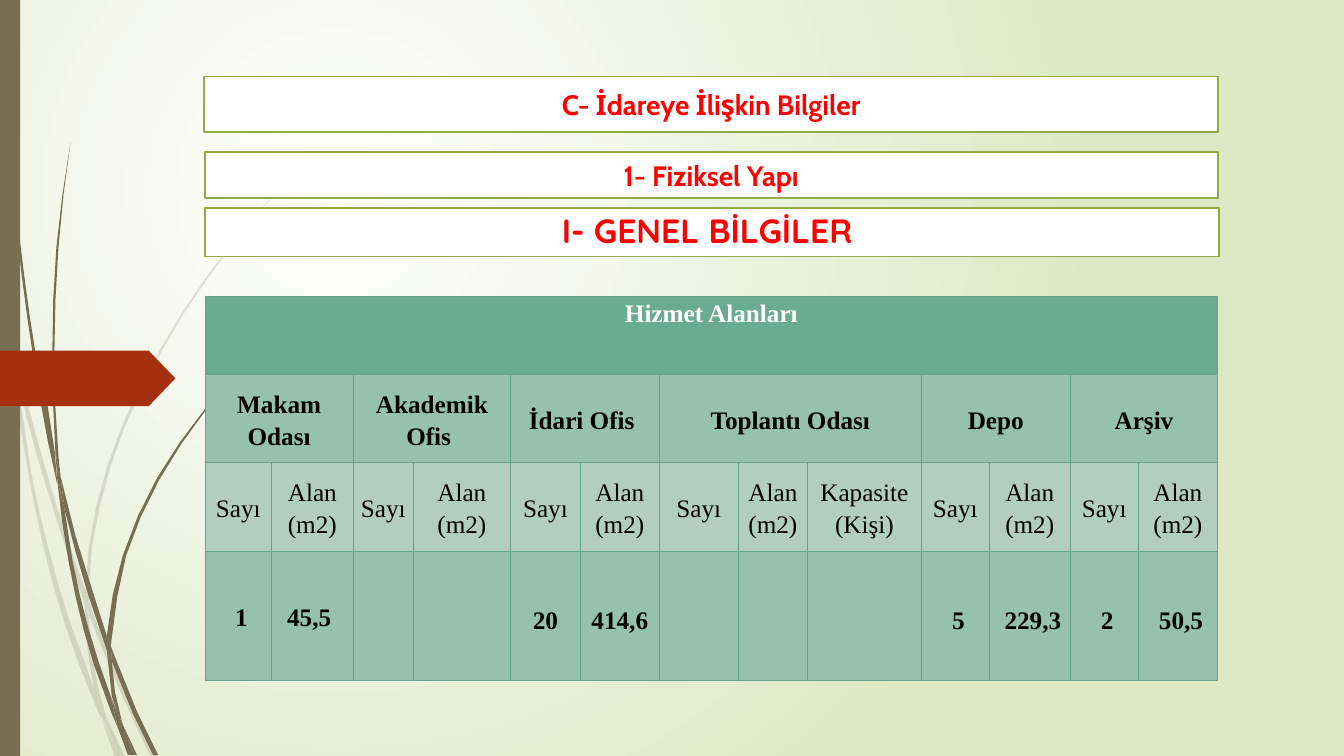
import math
from collections import namedtuple
from dataclasses import dataclass

import pptx
import pptx.dml.color
import pptx.enum.shapes
import pptx.enum.text
import pptx.oxml
import pptx.oxml.ns
import pptx.util
from lxml import etree

Pt = pptx.util.Pt
qn = pptx.oxml.ns.qn
SHAPE = pptx.enum.shapes.MSO_SHAPE
ANCHOR = pptx.enum.text.MSO_ANCHOR
CENTER = pptx.enum.text.PP_ALIGN.CENTER
Box = namedtuple("Box", "left top width height")


@dataclass(frozen=True)
class Theme:
    white: str = "FFFFFF"
    black: str = "000000"
    backdrop: str = "DFE8C4"
    stem: str = "766F54"
    tab: str = "A53010"
    outline: str = "92AA4C"
    heading: str = "FF0000"
    table_head: str = "6AAC91"
    table_mid: str = "97C1AF"
    table_light: str = "B2CEC1"
    table_line: str = "65A48B"
    title_font: str = "Quicksand"
    heading_font: str = "Cabin"
    table_font: str = "Times New Roman"
    title_size: int = 24
    heading_size: int = 20
    table_size: int = 18
    outline_width: float = 1.25
    cell_line_width: float = 0.75


THEME = Theme()

# Each stem piece has two edges, in points from the slide corner
PALE_STEMS = [
    ([(7.9, 252), (6.5, 231.8), (0, 203)], [(0, 215.3), (7.2, 247.7), (7.9, 252)]),
    ([(10.1, 248.4), (26, 312), (44.6, 374.4), (61.2, 421.9)],
     [(60.5, 431.3), (41.8, 375.8), (25.9, 323.6), (12.2, 270.7)]),
    ([(63.4, 429.1), (66.2, 437), (91.4, 498.2), (111.6, 540.7)],
     [(108, 540.7), (88.6, 499.7), (63.4, 439.2)]),
    ([(75.6, 511.9), (89.3, 540.7)], [(85.7, 540.7)]),
    ([(7.9, 252), (12.2, 270.7), (22.3, 337.7), (50.4, 445.7), (67, 491.8), (72.7, 514.1)],
     [(66.2, 499), (46.8, 447.1), (20.2, 338.4), (7.9, 252)]),
    ([(60.5, 431.3), (63.4, 439.2), (65.5, 465.1), (75.6, 511.9)],
     [(69.1, 498.2), (67, 491.8), (62.6, 465.1), (60.5, 431.3)]),
    ([(63.4, 429.1), (63.4, 420.5), (79.2, 332.6), (115.2, 251.3), (164.9, 176.4),
      (193, 142.6), (224.6, 110.9)],
     [(224.6, 110.2), (193, 141.8), (164.2, 175.7), (113.8, 250.6), (77, 331.9),
      (61.2, 420.5), (61.2, 421.9)]),
    ([(72.7, 514.1), (82.1, 540.7)], [(85.7, 540.7)]),
    ([(63.4, 437.8), (63.4, 429.1)], [(61.2, 421.9), (60.5, 431.3)]),
    ([(67, 491.8), (71.3, 509), (85.7, 540.7)], [(75.6, 511.9), (69.1, 498.2)]),
]
DARK_STEMS = [
    ([(2.2, 0), (2.9, 34.6), (5, 79.2), (12.2, 167.8), (23.8, 255.6), (40.3, 343.4), (41, 346.3)],
     [(39.6, 329), (39.6, 326.2), (25.9, 255.6), (13.7, 167), (5.8, 78.5), (3.6, 34.6), (2.9, 0)]),
    ([(43.2, 339.8), (54, 383), (67, 424.8), (76.3, 454.3)],
     [(76.3, 464.4), (63.4, 426.2), (46.1, 363.6)]),
    ([(79.2, 461.5), (81.4, 467.3), (97.9, 508.3), (113, 539.3)],
     [(109.4, 539.3), (95, 509.8), (79.9, 472.3)]),
    ([(41, 343.4), (46.1, 363.6), (51.8, 400.3), (70.6, 473), (79.2, 497.5), (84.2, 519.8)],
     [(79.9, 509.8), (67, 474.5), (49, 401), (41, 343.4)]),
    ([(43.2, 339.8), (41.8, 326.2), (38.9, 251.3), (41.8, 176.4), (45.4, 139), (50.4, 101.5)],
     [(50.4, 101.5), (44.6, 139), (40.3, 176.4), (37.4, 251.3), (39.6, 323.3)]),
    ([(87.8, 517.7), (97.9, 539.3)], [(95.8, 539.3)]),
    ([(41, 343.4), (46.1, 363.6)], [(43.2, 339.8), (39.6, 323.3)]),
    ([(79.2, 461.5), (79.9, 455.8), (90, 397.4), (113.8, 342.7), (147.6, 292.3),
      (166.3, 269.3), (187.6, 247.7)],
     [(187.2, 247.7), (166.3, 268.6), (146.9, 291.6), (112.3, 341.3), (87.8, 396.7),
      (76.3, 454.3)]),
    ([(84.2, 519.8), (91.4, 539.3)], [(94.3, 539.3)]),
    ([(76.3, 464.4), (79.9, 497.5), (83.5, 508.3), (87.8, 517.7)],
     [(87.1, 515.5), (82.1, 494), (79.9, 472.3)]),
    ([(76.3, 464.4), (79.9, 472.3)], [(79.2, 461.5), (76.3, 454.3)]),
    ([(79.2, 497.5), (83.5, 516.2), (84.2, 519.8), (93.6, 539.3)],
     [(95.8, 539.3), (87.8, 517.7), (83.5, 508.3)]),
]

# Table content: column widths, row heights, groups of columns, values
COLUMNS = [47.5, 58.5, 43, 69.5, 50, 56.5, 56.5, 49.5, 81.5, 48.5, 58, 48.5, 57]
ROWS = [56, 63, 63.5, 92]
AREA = ["Sayı", "Alan (m2)"]
GROUPS = [("Makam Odası", AREA), ("Akademik Ofis ", AREA), ("İdari Ofis ", AREA),
          ("Toplantı Odası", AREA + ["Kapasite (Kişi)"]), ("Depo", AREA), ("Arşiv", AREA)]
VALUES = [" 1", "45,5 ", "", "", "20", "414,6", "", "", "", " 5", " 229,3", " 2", " 50,5"]


def rgb(code):
    return pptx.dml.color.RGBColor.from_string(code)


def paint(shape, color, line=None):
    shape.shadow.inherit = False
    shape.fill.solid()
    shape.fill.fore_color.rgb = rgb(color)
    if line:
        shape.line.color.rgb = rgb(line)
        shape.line.width = Pt(THEME.outline_width)
    else:
        shape.line.fill.background()


def write(frame, text, font, size, color, bold, spacing=1.0):
    frame.text = text
    para = frame.paragraphs[0]
    para.alignment, para.line_spacing = CENTER, spacing
    para.font.name, para.font.size, para.font.bold = font, Pt(size), bold
    para.font.color.rgb = rgb(color)
    return para


def smooth(edge, stride=30):
    """Pass a curve through the points of an edge, with a point at about every stride."""
    if len(edge) < 3:
        return edge
    gaps = [math.dist(p, q) for p, q in zip(edge, edge[1:])]
    units = [((q[0] - p[0]) / g, (q[1] - p[1]) / g) for p, q, g in zip(edge, edge[1:], gaps)]
    inner = [[(u[k] * h + v[k] * g) / (g + h) for k in (0, 1)]
             for u, v, g, h in zip(units, units[1:], gaps, gaps[1:])]
    first, last = ([2 * u[k] - m[k] for k in (0, 1)]
                   for u, m in ((units[0], inner[0]), (units[-1], inner[-1])))
    slopes = [first] + inner + [last]
    points = [edge[0]]
    for p, q, m, n, gap in zip(edge, edge[1:], slopes, slopes[1:], gaps):
        steps = max(1, round(gap / stride))
        for t in (k / steps for k in range(1, steps + 1)):
            s = t * t * (3 - 2 * t)
            points.append(tuple(
                p[k] * (1 - s) + q[k] * s
                + gap * (m[k] * t * (1 - t) ** 2 - n[k] * t * t * (1 - t)) for k in (0, 1)))
    return points


def draw_stems(page, box, pieces, alpha=None):
    for edges in pieces:
        outline = [(Pt(box.left + x), Pt(box.top + y)) for edge in edges for x, y in smooth(edge)]
        builder = page.shapes.build_freeform(*outline[0])
        builder.add_line_segments(outline[1:], close=True)
        stem = builder.convert_to_shape()
        paint(stem, THEME.stem)
        if alpha:
            tint = stem.element.spPr.find(".//" + qn("a:srgbClr"))
            etree.SubElement(tint, qn("a:alpha"), val=str(alpha * 1000))


def draw_backdrop(page, box):
    # Radial background
    fill = page.background.fill
    fill.gradient()
    for stop, color, position in zip(fill.gradient_stops, (THEME.white, THEME.backdrop), (0, 1)):
        stop.color.rgb, stop.position = rgb(color), position
    gradient = page.element.find(".//" + qn("a:gradFill"))
    radial = etree.Element(qn("a:path"), {"path": "circle"})
    etree.SubElement(radial, qn("a:fillToRect"), l="50000", t="50000", r="100000", b="100000")
    gradient.replace(gradient.find(qn("a:lin")), radial)

    # Stems, side bar and red tab
    draw_stems(page, box, PALE_STEMS, alpha=20)
    draw_stems(page, box, DARK_STEMS)
    bar = page.shapes.add_shape(SHAPE.RECTANGLE, Pt(box.left), Pt(box.top), Pt(14.4), Pt(box.height))
    paint(bar, THEME.stem)
    tab = page.shapes.add_shape(SHAPE.PENTAGON, Pt(box.left), Pt(box.top + 250.5), Pt(125.3), Pt(39.6))
    tab.adjustments[0] = 0.48
    paint(tab, THEME.tab)


def draw_title(page, box):
    title = page.shapes.title
    title.left, title.top, title.width, title.height = map(Pt, box)
    paint(title, THEME.white, THEME.outline)
    write(title.text_frame, "I- GENEL BİLGİLER ", THEME.title_font, THEME.title_size,
          THEME.heading, True, 0.9)
    title.text_frame.vertical_anchor = ANCHOR.MIDDLE
    title.element.getparent().append(title.element)  # in front of the stems


def draw_heading(page, box, text):
    heading = page.shapes.add_shape(SHAPE.RECTANGLE, *map(Pt, box))
    paint(heading, THEME.white, THEME.outline)
    write(heading.text_frame, text, THEME.heading_font, THEME.heading_size, THEME.heading, True)
    heading.text_frame.vertical_anchor = ANCHOR.MIDDLE


def format_cell(cell, text, row, drop):
    color = THEME.black if row else THEME.white
    para = write(cell.text_frame, text, THEME.table_font, THEME.table_size, color, row != 2, 1.15)
    para.space_after = Pt(10)
    cell.vertical_anchor = ANCHOR.MIDDLE if row else ANCHOR.TOP
    cell.margin_left = cell.margin_right = Pt(3.6)
    cell.margin_top, cell.margin_bottom = Pt(drop), 0
    props = cell._tc.get_or_add_tcPr()
    for side in ("a:lnL", "a:lnR", "a:lnT", "a:lnB"):
        line = etree.SubElement(props, qn(side), w=str(Pt(THEME.cell_line_width)))
        solid = etree.SubElement(line, qn("a:solidFill"))
        etree.SubElement(solid, qn("a:srgbClr"), val=THEME.table_line)
    cell.fill.solid()
    fills = (THEME.table_head, THEME.table_mid, THEME.table_light, THEME.table_mid)
    cell.fill.fore_color.rgb = rgb(fills[row])


def draw_table(page, box):
    table = page.shapes.add_table(len(ROWS), len(COLUMNS), *map(Pt, box)).table
    table.first_row = table.horz_banding = False
    for column, width in zip(table.columns, COLUMNS):
        column.width = Pt(box.width * width / sum(COLUMNS))
    for row, height in zip(table.rows, ROWS):
        row.height = Pt(box.height * height / sum(ROWS))

    groups = [text for name, heads in GROUPS for text in [name] + [""] * (len(heads) - 1)]
    heads = [head for _, group in GROUPS for head in group]
    banner = ["Hizmet Alanları"] + [""] * (len(COLUMNS) - 1)
    for r, texts in enumerate((banner, groups, heads, VALUES)):
        for c, text in enumerate(texts):
            format_cell(table.cell(r, c), text, r, drop=4 if r == 3 and c > 3 else 0)

    table.cell(0, 0).merge(table.cell(0, len(COLUMNS) - 1))
    first = 0
    for _, group in GROUPS:
        table.cell(1, first).merge(table.cell(1, first + len(group) - 1))
        first += len(group)


def main():
    deck = pptx.Presentation()
    deck.slide_width, deck.slide_height = Pt(960), Pt(540)
    page = deck.slides.add_slide(deck.slide_layouts[5])
    draw_backdrop(page, Box(0, 0, 960, 540))
    draw_title(page, Box(146.2, 148.5, 724.5, 34.8))
    draw_heading(page, Box(145.9, 54.7, 724.3, 39.6), "C- İdareye İlişkin Bilgiler")
    draw_heading(page, Box(146.2, 108.7, 723.8, 32.6), "1- Fiziksel Yapı")
    draw_table(page, Box(146.5, 211.5, 723.5, 274.5))
    deck.save("out.pptx")


if __name__ == "__main__":
    main()
